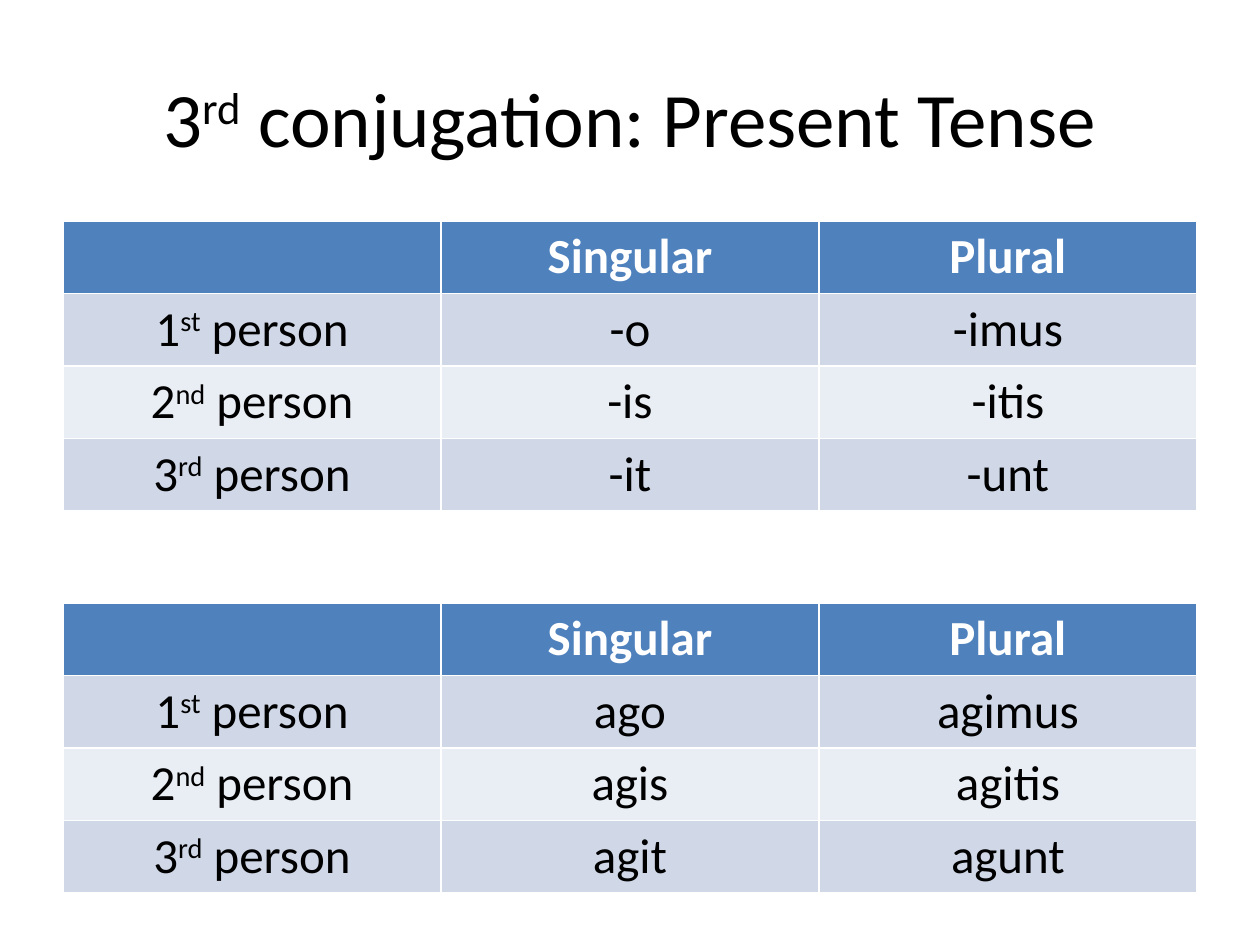
import pptx
import pptx.dml.color
import pptx.enum.text
import pptx.util

PX = 914400 // 126
FONT = "Calibri"
BLACK, WHITE = "000000", "FFFFFF"
HEADER_FILL = "4F81BD"
BAND_FILLS = ("D0D8E8", "E9EDF4")
PERSONS = (("1", "st"), ("2", "nd"), ("3", "rd"))
ENDINGS = (("-o", "-imus"), ("-is", "-itis"), ("-it", "-unt"))
AGERE_FORMS = (("ago", "agimus"), ("agis", "agitis"), ("agit", "agunt"))


def emu(px):
    return pptx.util.Emu(px * PX)


def rgb(value):
    return pptx.dml.color.RGBColor.from_string(value)


def write(frame, pieces, size, color, bold=False):
    """Write one centred line; every second piece is a superscript."""
    line = frame.paragraphs[0]
    line.alignment = pptx.enum.text.PP_ALIGN.CENTER
    for index, piece in enumerate(pieces):
        run = line.add_run()
        run.text = piece
        run.font.name = FONT
        run.font.size = pptx.util.Pt(size)
        run.font.bold = bold
        run.font.color.rgb = rgb(color)
        if index % 2:
            run.font._element.set("baseline", "30000")


def place_title(slide, left, top, width, height):
    title = slide.shapes.title
    title.left, title.top = emu(left), emu(top)
    title.width, title.height = emu(width), emu(height)
    title.text_frame.vertical_anchor = pptx.enum.text.MSO_ANCHOR.MIDDLE
    write(title.text_frame, ("3", "rd", " conjugation: Present Tense"), 44, BLACK)


def place_conjugation(slide, forms, left, top, width, height):
    rows = [((), ("Singular",), ("Plural",))]
    for (number, suffix), (singular, plural) in zip(PERSONS, forms):
        rows.append(((number, suffix, " person"), (singular,), (plural,)))
    table = slide.shapes.add_table(
        len(rows), len(rows[0]), emu(left), emu(top), emu(width), emu(height)
    ).table
    for r, row in enumerate(rows):
        header = r == 0
        for c, pieces in enumerate(row):
            cell = table.cell(r, c)
            cell.fill.solid()
            cell.fill.fore_color.rgb = rgb(HEADER_FILL if header else BAND_FILLS[(r - 1) % 2])
            write(cell.text_frame, pieces, 28, WHITE if header else BLACK, bold=header)


def main():
    deck = pptx.Presentation()
    deck.slide_width, deck.slide_height = emu(1260), emu(945)
    slide = deck.slides.add_slide(deck.slide_layouts.get_by_name("Title Only"))
    left, width = 63, 1134
    place_title(slide, left, 38, width, 157)
    for forms, top in ((ENDINGS, 221), (AGERE_FORMS, 603)):
        place_conjugation(slide, forms, left, top, width, 288)
    deck.save("out.pptx")


if __name__ == "__main__":
    main()
